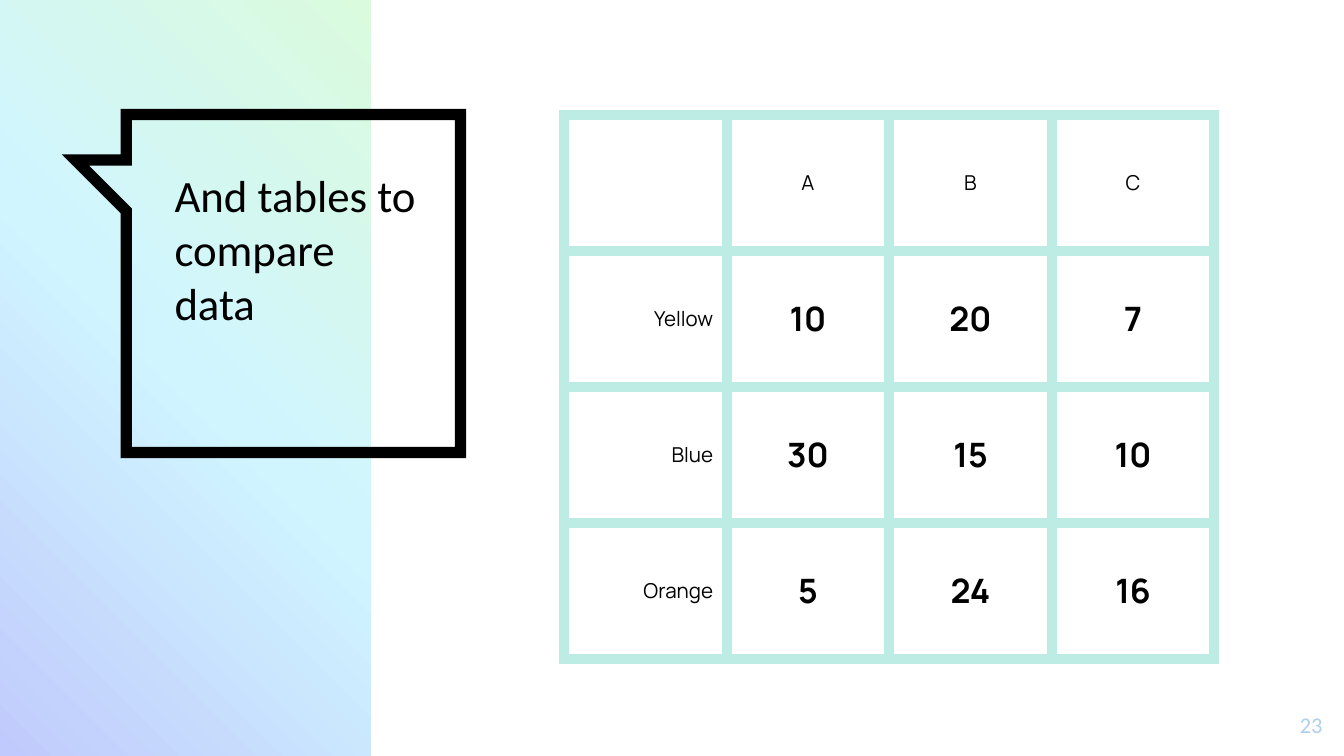
import dataclasses

import lxml.etree
import pptx
import pptx.dml.color
import pptx.enum.shapes
import pptx.enum.text
import pptx.oxml.ns
import pptx.util

Pt = pptx.util.Pt
qn = pptx.oxml.ns.qn
Align = pptx.enum.text.PP_ALIGN


@dataclasses.dataclass(frozen=True)
class Theme:
    ink: str = "000000"
    grid: str = "BDECE5"
    number: str = "AFCFEC"
    panel: tuple = ("C0CAFC", "D0F5FF", "DAFBDD")
    title_font: str = "Calibri"
    table_font: str = "Manrope"
    title_size: int = 24
    value_size: int = 18
    number_size: int = 12
    label_size: int = 11
    stroke: int = 6


def rgb(color):
    return pptx.dml.color.RGBColor.from_string(color)


class SlideBuilder:
    def __init__(self, slide, theme):
        self.slide = slide
        self.theme = theme

    def add_span(self, frame, text, font, size, color, align=Align.LEFT, bold=False):
        para = frame.paragraphs[0]
        para.alignment = align
        span = para.add_run()
        span.text = text
        span.font.name = font
        span.font.size = Pt(size)
        span.font.bold = bold
        span.font.color.rgb = rgb(color)

    def gradient_panel(self, left, top, width, height):
        panel = self.slide.shapes.add_shape(
            pptx.enum.shapes.MSO_SHAPE.RECTANGLE,
            Pt(left), Pt(top), Pt(width), Pt(height))
        panel.shadow.inherit = False
        panel.line.fill.background()
        panel.fill.gradient()
        panel.fill.gradient_angle = 45
        gradient = panel.element.spPr.find(qn("a:gradFill"))
        gradient.find(qn("a:lin")).set("scaled", "0")
        stops = gradient.find(qn("a:gsLst"))
        for stop in list(stops):
            stops.remove(stop)
        colors = self.theme.panel
        for index, color in enumerate(colors):
            position = 100000 * index // (len(colors) - 1)
            stop = lxml.etree.SubElement(stops, qn("a:gs"), pos=str(position))
            lxml.etree.SubElement(stop, qn("a:srgbClr"), val=color)

    def outline(self, points):
        start, *rest = [(Pt(x), Pt(y)) for x, y in points]
        builder = self.slide.shapes.build_freeform(*start)
        builder.add_line_segments(rest, close=True)
        shape = builder.convert_to_shape()
        shape.shadow.inherit = False
        shape.fill.background()
        shape.line.color.rgb = rgb(self.theme.ink)
        shape.line.width = Pt(self.theme.stroke)
        line = shape.element.spPr.find(qn("a:ln"))
        lxml.etree.SubElement(line, qn("a:miter"), lim="800000")

    def text(self, left, top, width, height, text, size, color, align=Align.LEFT):
        box = self.slide.shapes.add_textbox(
            Pt(left), Pt(top), Pt(width), Pt(height))
        frame = box.text_frame
        frame.word_wrap = True
        frame.margin_left = frame.margin_right = Pt(7.2)
        frame.margin_top = frame.margin_bottom = Pt(7.2)
        self.add_span(frame, text, self.theme.title_font, size, color, align)

    def border(self, cell):
        properties = cell._tc.get_or_add_tcPr()
        for side in ("a:lnL", "a:lnR", "a:lnT", "a:lnB"):
            line = lxml.etree.SubElement(
                properties, qn(side), w=str(Pt(self.theme.stroke)))
            fill = lxml.etree.SubElement(line, qn("a:solidFill"))
            lxml.etree.SubElement(fill, qn("a:srgbClr"), val=self.theme.grid)

    def table(self, left, top, column_width, row_height, rows):
        theme = self.theme
        count = len(rows[0])
        table = self.slide.shapes.add_table(
            len(rows), count, Pt(left), Pt(top),
            Pt(column_width * count), Pt(row_height * len(rows))).table
        table.first_row = table.horz_banding = False
        for column in table.columns:
            column.width = Pt(column_width)
        for row in table.rows:
            row.height = Pt(row_height)
        for row_index, values in enumerate(rows):
            for column_index, value in enumerate(values):
                cell = table.cell(row_index, column_index)
                self.border(cell)
                cell.fill.background()
                cell.vertical_anchor = pptx.enum.text.MSO_ANCHOR.MIDDLE
                cell.margin_left = cell.margin_right = Pt(7.2)
                cell.margin_top = cell.margin_bottom = Pt(5)
                if not value:
                    continue
                is_value = row_index > 0 and column_index > 0
                self.add_span(
                    cell.text_frame, value, theme.table_font,
                    theme.value_size if is_value else theme.label_size,
                    theme.ink,
                    Align.CENTER if column_index else Align.RIGHT, is_value)


def main():
    deck = pptx.Presentation()
    deck.slide_width, deck.slide_height = Pt(720), Pt(405)
    theme = Theme()
    page = SlideBuilder(deck.slides.add_slide(deck.slide_layouts[6]), theme)

    page.gradient_panel(0, 0, 198.7, 405)
    page.outline([(67.7, 61.4), (246.7, 61.4), (246.7, 242.4), (67.7, 242.4),
                  (67.7, 113), (40.4, 85.7), (67.7, 85.7)])
    page.text(86.4, 82.8, 144.7, 150.5, "And tables to compare data",
              theme.title_size, theme.ink)
    page.table(302.2, 61.4, 87.1, 72.9, [
        ("", "A", "B", "C"),
        ("Yellow", "10", "20", "7"),
        ("Blue", "30", "15", "10"),
        ("Orange", "5", "24", "16"),
    ])
    page.text(672.4, 374, 43.2, 31, "23",
              theme.number_size, theme.number, Align.RIGHT)

    deck.save("out.pptx")


if __name__ == "__main__":
    main()
